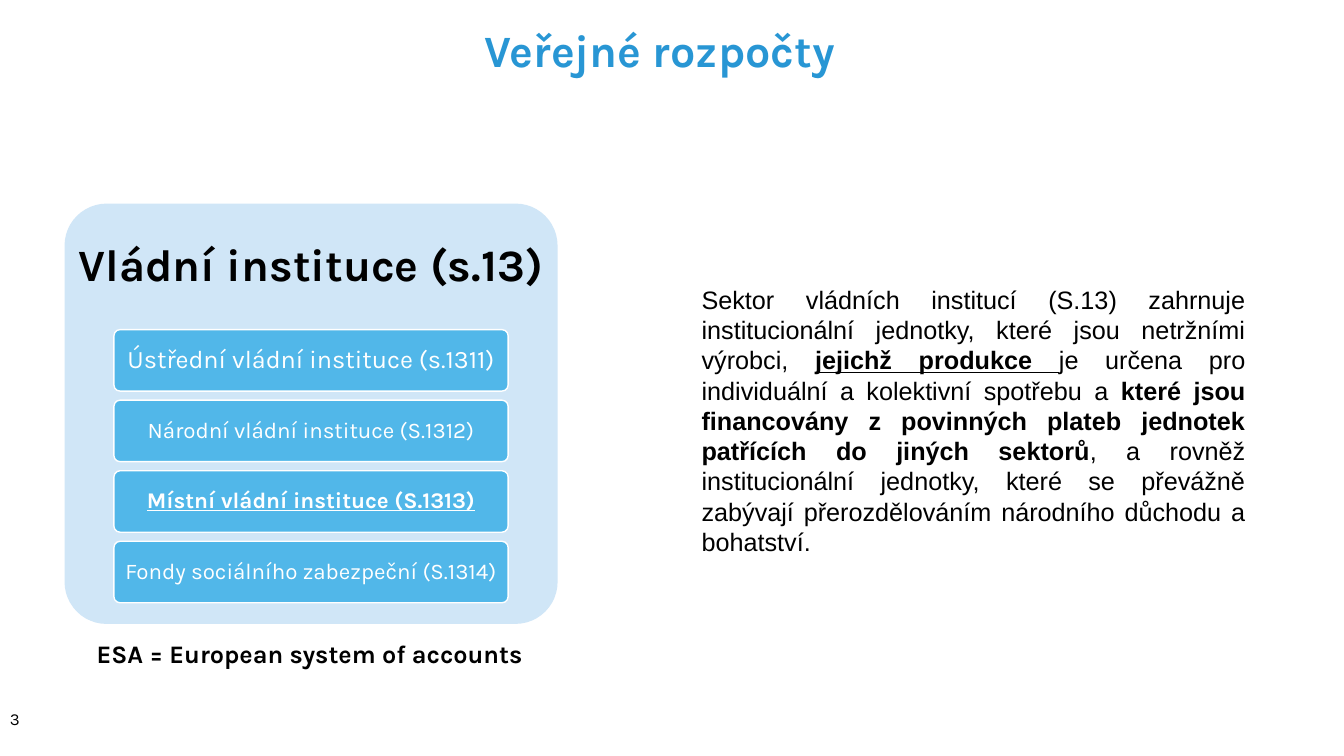
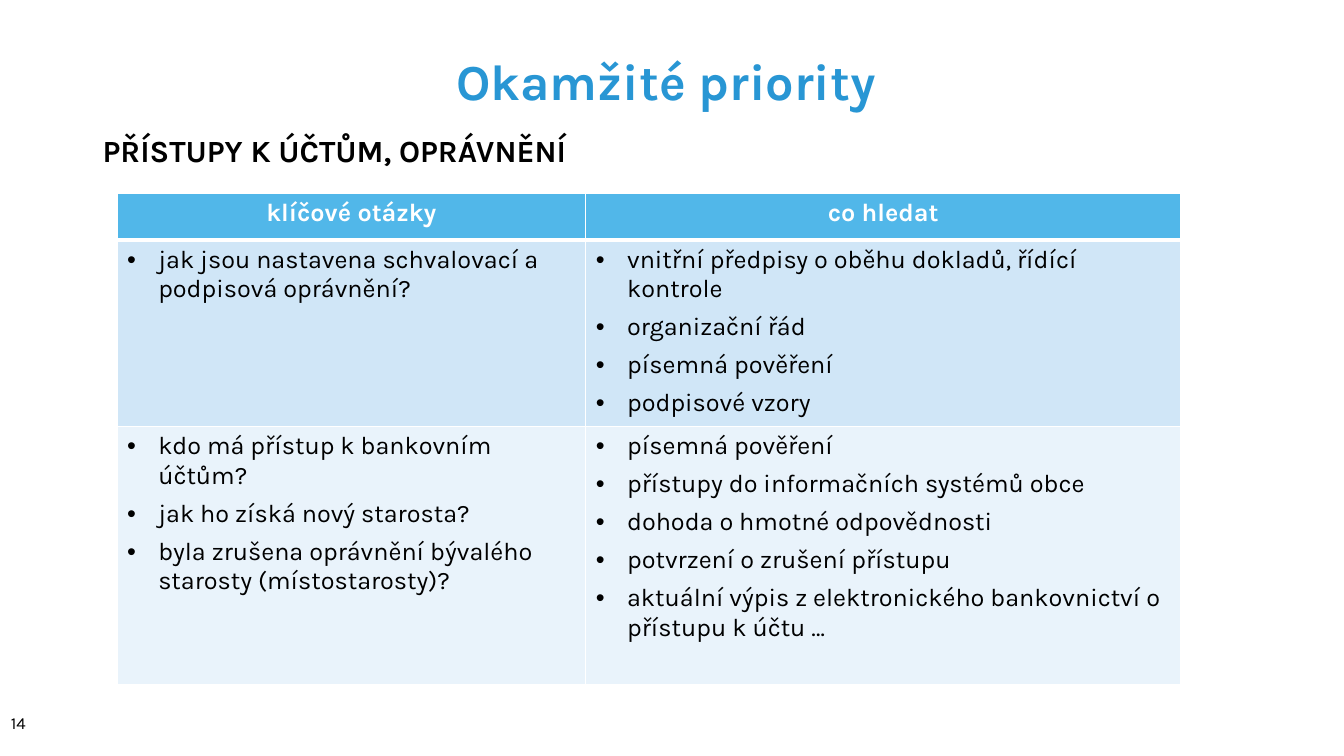
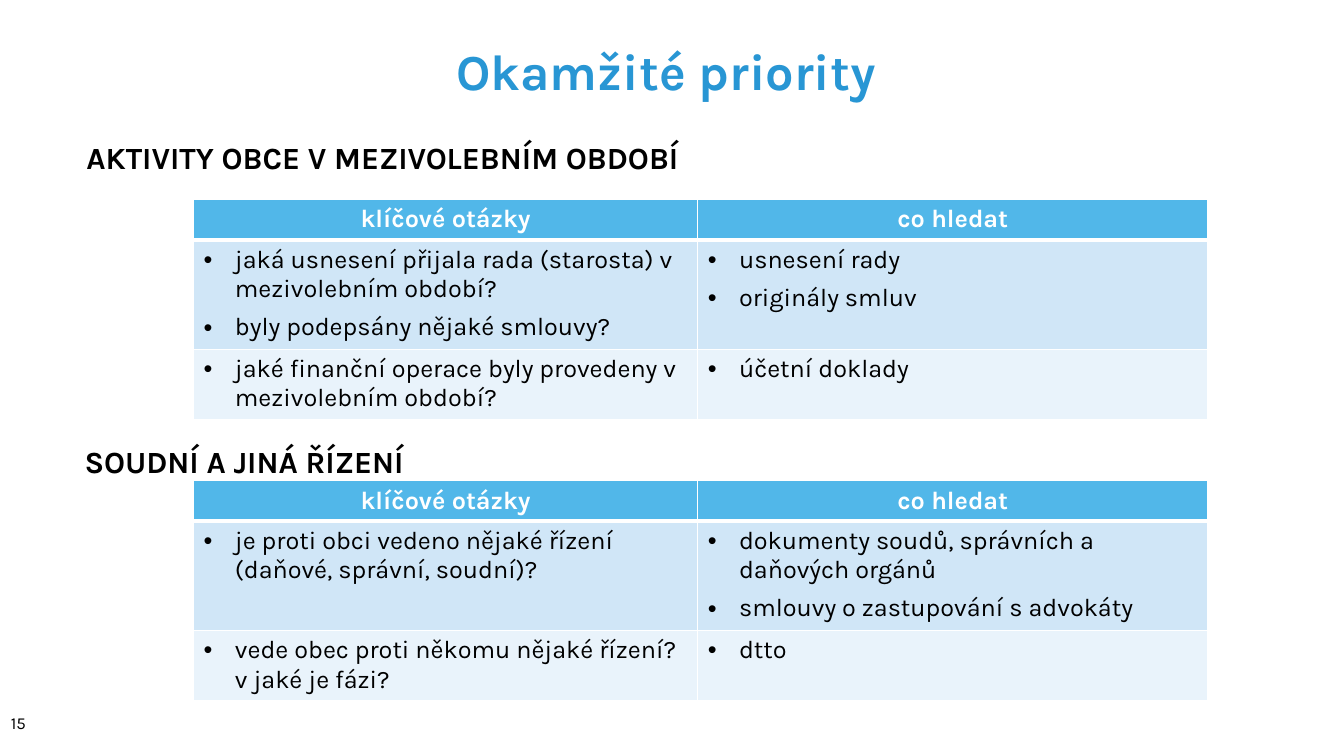
from pptx import Presentation
from pptx.dml.color import RGBColor
from pptx.enum.shapes import MSO_SHAPE
from pptx.enum.text import MSO_ANCHOR, PP_ALIGN
from pptx.oxml.ns import qn
from pptx.util import Inches, Pt
from lxml import etree

ROUNDED = MSO_SHAPE.ROUNDED_RECTANGLE
LEFT, CENTER, JUSTIFY = PP_ALIGN.LEFT, PP_ALIGN.CENTER, PP_ALIGN.JUSTIFY
TOP, MIDDLE = MSO_ANCHOR.TOP, MSO_ANCHOR.MIDDLE
FONT = "Karla"
COLORS = {
    "title": "2896D4", "accent": "51B7E9", "panel": "D0E6F7",
    "pale": "E9F3FB", "text": "000000", "white": "FFFFFF",
}

SECTOR = {
    "title": "Veřejné rozpočty",
    "page": "3",
    "heading": "Vládní instituce (s.13)",
    "levels": [
        ("Ústřední vládní instituce (s.1311)", {"size": 18}),
        ("Národní vládní instituce (S.1312)", {}),
        ("Místní vládní instituce (S.1313)", {"bold": True, "underline": True}),
        ("Fondy sociálního zabezpeční (S.1314)", {}),
    ],
    "note": "ESA = European system of accounts",
    "definition": [
        ("Sektor vládních institucí (S.13) zahrnuje institucionální jednotky, "
         "které jsou netržními výrobci, ", {}),
        ("jejichž produkce ", {"bold": True, "underline": True}),
        ("je určena pro individuální a kolektivní spotřebu a ", {}),
        ("které jsou financovány z povinných plateb jednotek patřících "
         "do jiných sektorů", {"bold": True}),
        (", a rovněž institucionální jednotky, které se převážně zabývají "
         "přerozdělováním národního důchodu a bohatství. ", {}),
    ],
}

TABLE_HEADER = ("klíčové otázky", "co hledat")

PRIORITIES = [
    {
        "title": "Okamžité priority ",
        "title_box": (0.92, 0.26, 11.5, 1),
        "page": "14",
        "sections": [
            {
                "topic": "PŘÍSTUPY K ÚČTŮM, OPRÁVNĚNÍ",
                "topic_box": (0.92, 1.26, 11.5, 0.47),
                "corner": (1.16, 1.92),
                "columns": (4.65, 5.9),
                "heights": (0.46, 1.85, 2.56),
                "rows": [
                    (["jak jsou nastavena schvalovací a podpisová oprávnění?"],
                     ["vnitřní předpisy o oběhu dokladů, řídící kontrole",
                      "organizační řád", "písemná pověření", "podpisové vzory"]),
                    (["kdo má přístup k bankovním účtům?",
                      "jak ho získá nový starosta?",
                      "byla zrušena oprávnění bývalého starosty (místostarosty)?"],
                     ["písemná pověření",
                      "přístupy do informačních systémů obce",
                      "dohoda o hmotné odpovědnosti",
                      "potvrzení o zrušení přístupu",
                      "aktuální výpis z elektronického bankovnictví "
                      "o přístupu k účtu …"]),
                ],
            },
        ],
    },
    {
        "title": "Okamžité priority ",
        "title_box": (0.92, 0.15, 11.5, 1.01),
        "page": "15",
        "sections": [
            {
                "topic": "AKTIVITY OBCE V MEZIVOLEBNÍM OBDOBÍ",
                "topic_box": (0.76, 1.33, 6.44, 0.47),
                "corner": (1.92, 1.98),
                "columns": (5, 5.06),
                "heights": (0.4, 1.06, 0.68),
                "rows": [
                    (["jaká usnesení přijala rada (starosta) "
                      "v mezivolebním období?",
                      "byly podepsány nějaké smlouvy?"],
                     ["usnesení rady", "originály smluv"]),
                    (["jaké finanční operace byly provedeny v mezivolebním období?"],
                     ["účetní doklady"]),
                ],
            },
            {
                "topic": "SOUDNÍ A JINÁ ŘÍZENÍ",
                "topic_box": (0.74, 4.34, 3.57, 0.47),
                "corner": (1.92, 4.77),
                "columns": (5, 5.06),
                "heights": (0.4, 1.08, 0.7),
                "rows": [
                    (["je proti obci vedeno nějaké řízení "
                      "(daňové, správní, soudní)?"],
                     ["dokumenty soudů, správních a daňových orgánů",
                      "smlouvy o zastupování s advokáty"]),
                    (["vede obec proti někomu nějaké řízení? v jaké je fázi?"],
                     ["dtto"]),
                ],
            },
        ],
    },
]


def rgb(name):
    return RGBColor.from_string(COLORS[name])


def inches(values):
    return [Inches(value) for value in values]


def add_bullet(paragraph):
    properties = paragraph._p.get_or_add_pPr()
    properties.set("marL", str(Inches(0.31)))
    properties.set("indent", str(-Inches(0.31)))
    etree.SubElement(properties, qn("a:buFont")).set("typeface", "Arial")
    etree.SubElement(properties, qn("a:buChar")).set("char", "•")


def write(frame, paragraphs, size=18, color="text", bold=False, font=FONT,
          align=LEFT, spacing=None, gap=None, bullets=False):
    for index, content in enumerate(paragraphs):
        paragraph = frame.add_paragraph() if index else frame.paragraphs[0]
        paragraph.alignment = align
        if spacing:
            paragraph.line_spacing = spacing
        if gap:
            paragraph.space_after = Pt(gap)
            if index:
                paragraph.space_before = Pt(gap)
        if bullets:
            add_bullet(paragraph)
        for text, style in [(content, {})] if isinstance(content, str) else content:
            run = paragraph.add_run()
            run.text = text
            run.font.name = font
            run.font.size = Pt(style.get("size", size))
            run.font.bold = style.get("bold", bold)
            run.font.underline = style.get("underline", False)
            run.font.color.rgb = rgb(color)


def set_frame(frame, anchor, inset=None, wrap=True):
    frame.word_wrap = wrap
    frame.vertical_anchor = anchor
    if inset is not None:
        frame.margin_left = frame.margin_right = Inches(inset)
        frame.margin_top = frame.margin_bottom = Inches(inset)


def add_text(slide, box, content, anchor=TOP, inset=None, wrap=True, **style):
    frame = slide.shapes.add_textbox(*inches(box)).text_frame
    set_frame(frame, anchor, inset, wrap)
    write(frame, [content], **style)


def add_rounded(slide, box, fill, outline=None):
    block = slide.shapes.add_shape(ROUNDED, *inches(box))
    block.adjustments[0] = 0.1
    block.shadow.inherit = False
    block.fill.solid()
    block.fill.fore_color.rgb = rgb(fill)
    if outline:
        block.line.color.rgb = rgb(outline)
        block.line.width = Pt(1)
    else:
        block.line.fill.background()
    return block


def start_slide(deck, title, title_box, page, page_corner, size=36, spacing=None):
    slide = deck.slides.add_slide(deck.slide_layouts[6])
    add_text(slide, title_box, title, anchor=MIDDLE, size=size, color="title",
             bold=True, align=CENTER, spacing=spacing)
    add_text(slide, (*page_corner, 0.48, 0.43), page, anchor=MIDDLE, size=12)
    return slide


def set_borders(cell, row):
    widths = {"L": 1, "R": 1, "T": 3 if row == 1 else 1, "B": 1 if row else 3}
    properties = cell._tc.get_or_add_tcPr()
    for position, (side, width) in enumerate(widths.items()):
        border = etree.Element(qn(f"a:ln{side}"), w=str(Pt(width)))
        fill = etree.SubElement(border, qn("a:solidFill"))
        etree.SubElement(fill, qn("a:srgbClr")).set("val", COLORS["white"])
        properties.insert(position, border)


def add_questions(slide, section):
    columns, heights = section["columns"], section["heights"]
    rows = [[[label] for label in TABLE_HEADER], *section["rows"]]
    box = (*section["corner"], sum(columns), sum(heights))
    table = slide.shapes.add_table(len(rows), len(columns), *inches(box)).table
    for column, width in zip(table.columns, columns):
        column.width = Inches(width)
    for row, (entries, height) in enumerate(zip(rows, heights)):
        table.rows[row].height = Inches(height)
        for column, paragraphs in enumerate(entries):
            cell = table.cell(row, column)
            cell.fill.solid()
            cell.fill.fore_color.rgb = rgb(("accent", "panel", "pale")[row])
            set_borders(cell, row)
            header = row == 0
            write(cell.text_frame, paragraphs, bold=header, gap=3,
                  color="white" if header else "text",
                  align=CENTER if header else LEFT, bullets=not header)


def build_sector(deck):
    slide = start_slide(deck, SECTOR["title"], (0.64, 0, 11.81, 0.98),
                        SECTOR["page"], (0, 6.92), size=32)
    add_text(slide, (0.86, 6.28, 4.44, 0.4), SECTOR["note"], bold=True)
    add_rounded(slide, (0.64, 2.02, 4.89, 4.17), "panel")
    add_text(slide, (0.64, 2.02, 4.89, 1.25), SECTOR["heading"], anchor=MIDDLE,
             inset=0.13, size=32, bold=True, align=CENTER, spacing=0.9)
    for index, level in enumerate(SECTOR["levels"]):
        block = add_rounded(slide, (1.13, 3.27 + index * 0.7, 3.91, 0.61),
                            "accent", "white")
        set_frame(block.text_frame, MIDDLE, 0.04)
        write(block.text_frame, [[level]], size=16, color="white",
              align=CENTER, spacing=0.9)
    add_text(slide, (6.86, 2.77, 5.59, 2.83), SECTOR["definition"],
             font="Arial", align=JUSTIFY)


def build_priorities(deck, content):
    slide = start_slide(deck, content["title"], content["title_box"],
                        content["page"], (0.01, 6.96), spacing=1.13)
    for section in content["sections"]:
        add_questions(slide, section)
        add_text(slide, section["topic_box"], section["topic"], size=22, bold=True)


def main():
    deck = Presentation()
    deck.slide_width, deck.slide_height = inches((13.33, 7.5))
    build_sector(deck)
    for content in PRIORITIES:
        build_priorities(deck, content)
    deck.save("out.pptx")


if __name__ == "__main__":
    main()
